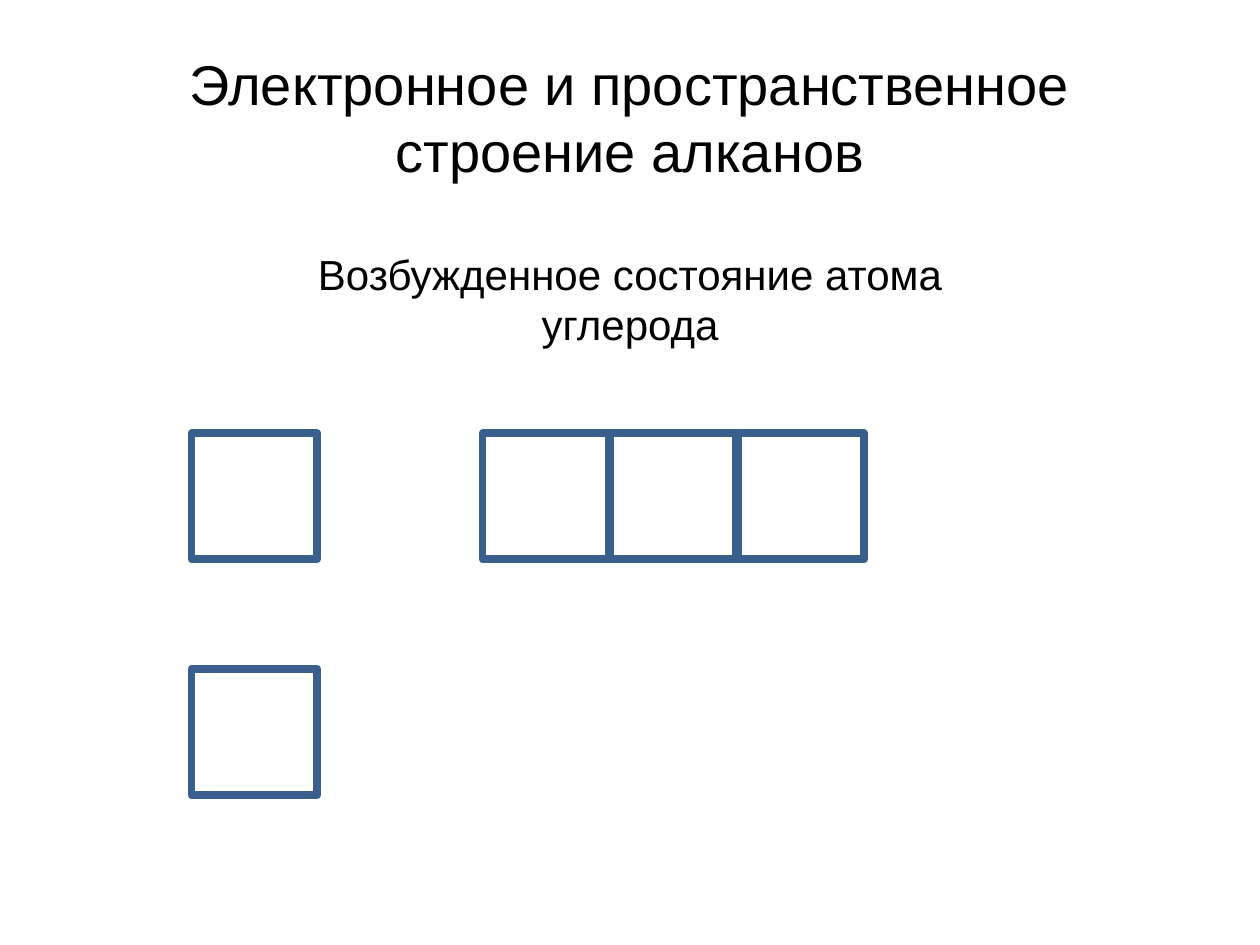
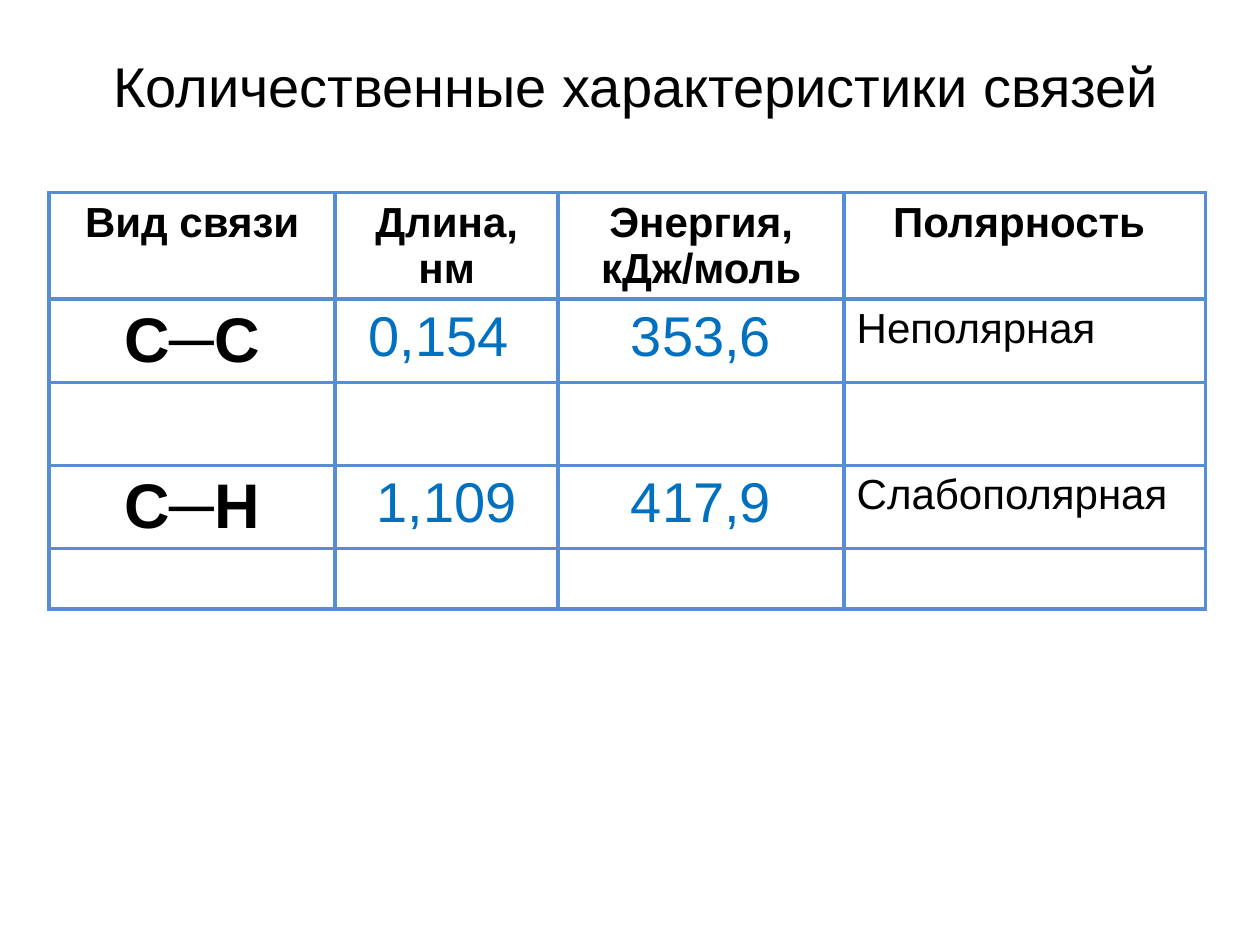
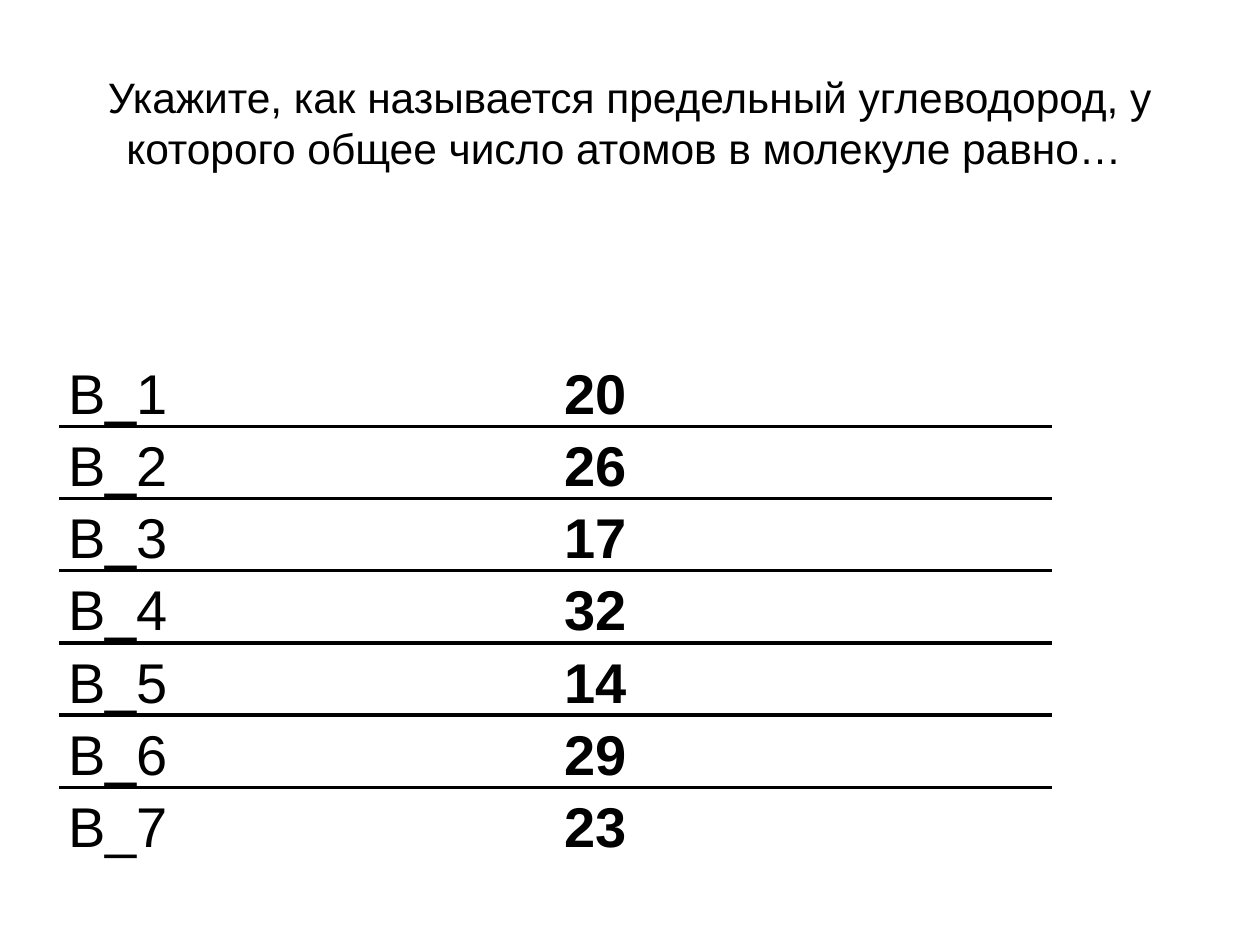
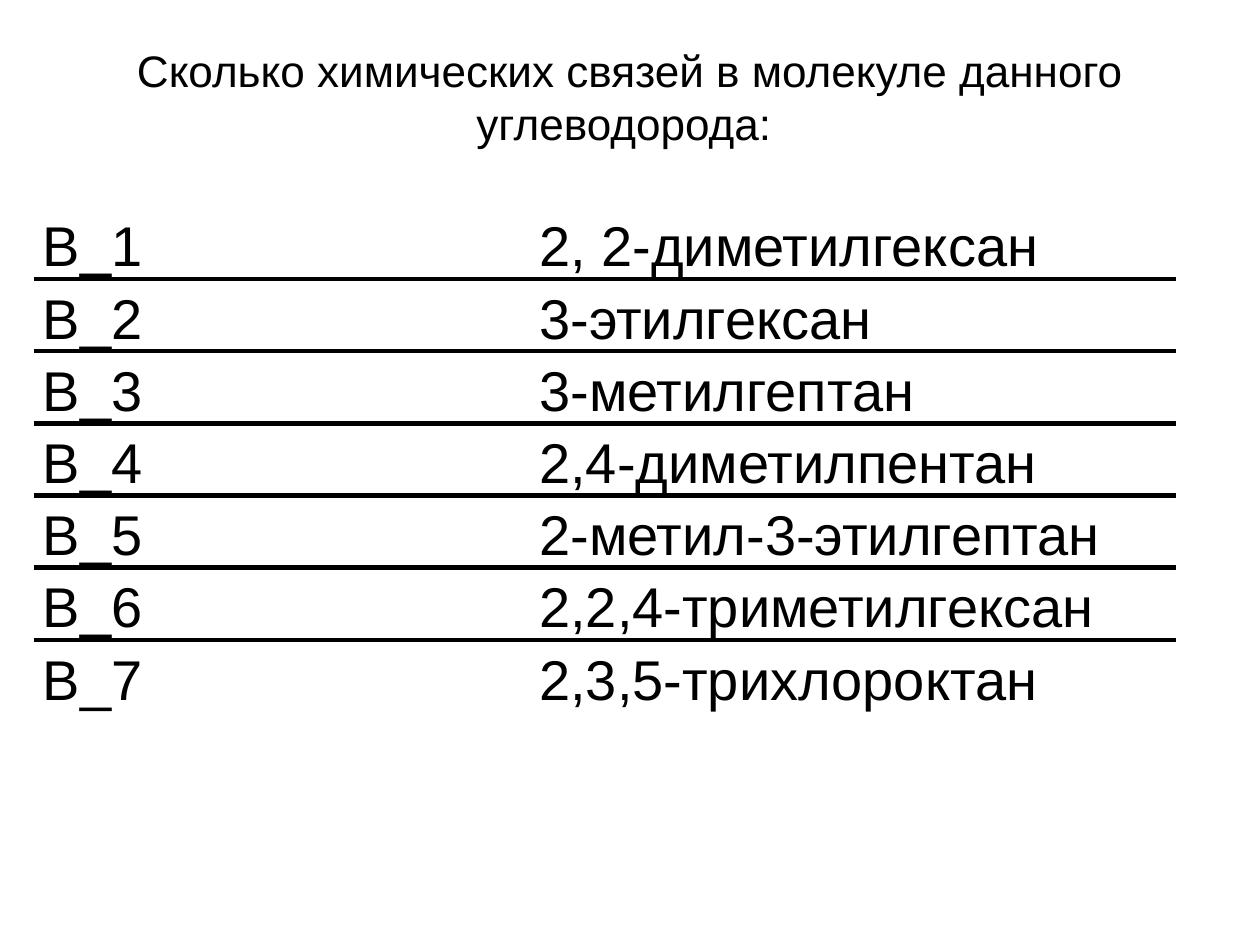
from lxml.etree import SubElement
from pptx import Presentation
from pptx.dml.color import RGBColor
from pptx.enum.shapes import MSO_SHAPE as Shape
from pptx.enum.text import MSO_ANCHOR as Anchor, MSO_AUTO_SIZE as AutoSize, PP_ALIGN as Align
from pptx.oxml.ns import qn
from pptx.util import Inches, Pt

# Grid: 100 columns by 75 rows on a 10 x 7.5 inch page
WIDTH, HEIGHT = Inches(10), Inches(7.5)
COLUMNS, ROWS = 100, 75
TITLE_ONLY = 5

FONT = "Arial"
BLACK, SQUARE_BLUE, GRID_BLUE, VALUE_BLUE = "000000", "3A5F8C", "558ED5", "0070C0"
PLAIN_TABLE = "{2D5ABB26-0587-4C30-8999-92F81FD0307C}"
VARIANTS = [f"В_{number}" for number in range(1, 8)]


def color(code):
    return RGBColor.from_string(code)


class Page:
    """Holds the deck's style and the current slide."""

    def __init__(self, deck):
        self.deck = deck
        self.slide = None

    def across(self, columns):
        return round(WIDTH * columns / COLUMNS)

    def down(self, rows):
        return round(HEIGHT * rows / ROWS)

    def area(self, left, top, width, height):
        return self.across(left), self.down(top), self.across(width), self.down(height)

    def fill_text(self, frame, text, size, code=BLACK, bold=False, align=Align.CENTER,
                  spacing=None):
        frame.text = text
        for para in frame.paragraphs:
            para.alignment, para.line_spacing = align, spacing
            for span in para.runs:
                font = span.font
                font.name, font.size, font.bold = FONT, Pt(size), bold
                font.color.rgb = color(code)

    def settle(self, frame):
        frame.word_wrap = True
        frame.auto_size = AutoSize.NONE
        frame.vertical_anchor = Anchor.MIDDLE

    def start(self, text, place, size=32, lift=0):
        """Adds a slide; lift raises the title within its box."""
        self.slide = self.deck.slides.add_slide(self.deck.slide_layouts[TITLE_ONLY])
        title = self.slide.shapes.title
        title.left, title.top, title.width, title.height = self.area(*place)
        self.settle(title.text_frame)
        title.text_frame.margin_bottom = Inches(0.05) + self.down(2 * lift)
        self.fill_text(title.text_frame, text, size)

    def text(self, text, place, size):
        box = self.slide.shapes.add_textbox(*self.area(*place))
        self.settle(box.text_frame)
        self.fill_text(box.text_frame, text, size)

    def square(self, left, top, side=10):
        box = self.slide.shapes.add_shape(Shape.RECTANGLE, *self.area(left, top, side, side))
        box.shadow.inherit = False
        box.fill.background()
        box.line.color.rgb = color(SQUARE_BLUE)
        box.line.width = Pt(4.5)

    def table(self, left, top, widths, heights):
        place = self.area(left, top, sum(widths), sum(heights))
        frame = self.slide.shapes.add_table(len(heights), len(widths), *place)
        table = frame.table
        table.first_row = table.horz_banding = False
        frame._element.find(".//" + qn("a:tableStyleId")).text = PLAIN_TABLE
        for column, width in zip(table.columns, widths):
            column.width = self.across(width)
        for row, height in zip(table.rows, heights):
            row.height = self.down(height)
        for cell in table.iter_cells():
            cell.fill.background()
        return table

    def border(self, cell, sides, code, width):
        """Draws the given sides, named in L, R, T, B order."""
        properties = cell._tc.get_or_add_tcPr()
        for index, side in enumerate(sides):
            line = SubElement(properties, qn(f"a:ln{side}"), w=str(Pt(width)))
            fill = SubElement(line, qn("a:solidFill"))
            SubElement(fill, qn("a:srgbClr"), val=code)
            properties.insert(index, line)

    def variants(self, left, top, widths, answers, width, bold=False):
        """Lists the variants with their tasks, ruled between rows."""
        table = self.table(left, top, widths, [5.73] * len(answers))
        last = len(answers) - 1
        for index, pair in enumerate(zip(VARIANTS, answers)):
            sides = ("T" if index else "") + ("B" if index < last else "")
            for column, text in enumerate(pair):
                cell = table.cell(index, column)
                cell.margin_left = cell.margin_right = Inches(0.07)
                cell.margin_top = cell.margin_bottom = 0
                self.fill_text(cell.text_frame, text, 32, bold=bold and column == 1,
                               align=Align.LEFT, spacing=1.15)
                self.border(cell, sides, BLACK, width)


def electron_slide(page):
    page.start("Электронное и пространственное строение алканов", (5, 3, 90, 12.5))
    # Orbitals: 1s below, 2s and three 2p above
    page.square(15.2, 53.1)
    page.square(15.2, 34.4)
    for index in range(3):
        page.square(38.3 + 10.15 * index, 34.4)
    page.text("Возбужденное состояние атома углерода", (21.1, 18.7, 57.8, 10), 24)


def bond_slide(page):
    page.start("Количественные характеристики связей", (5.5, 1.6, 90, 10.3))
    header = ["Вид связи", "Длина, нм", "Энергия, кДж/моль", "Полярность "]
    bonds = {1: ["С─С", "0,154 ", "353,6", "Неполярная"],
             3: ["С─Н", "1,109", "417,9", "Слабополярная"]}
    # Size, colour, weight and alignment of each column
    styles = [(36, BLACK, True, Align.CENTER), (32, VALUE_BLUE, False, Align.CENTER),
              (32, VALUE_BLUE, False, Align.CENTER), (24, BLACK, False, Align.LEFT)]
    table = page.table(3.9, 15.3, [22.7, 17.7, 22.7, 28.7], [8.4, 6.6, 6.6, 6.6, 4.8])
    for cell in table.iter_cells():
        page.border(cell, "LRTB", GRID_BLUE, 2.25)
    for column, text in enumerate(header):
        page.fill_text(table.cell(0, column).text_frame, text, 24, bold=True)
    for row, texts in bonds.items():
        for column, (text, style) in enumerate(zip(texts, styles)):
            page.fill_text(table.cell(row, column).text_frame, text, *style)


def atom_slide(page):
    page.start("Укажите, как называется предельный углеводород, у которого "
               "общее число атомов в молекуле равно… ", (5, 3, 90, 19.7), 24.3, lift=3.15)
    page.variants(4.7, 28.1, [39.4, 39.4], ["20", "26", "17", "32", "14", "29", "23"],
                  2.25, bold=True)


def molecule_slide(page):
    page.start("Сколько химических связей в молекуле данного углеводорода: ",
               (5, 3, 90, 11.1), 25.2, lift=0.9)
    page.variants(2.7, 16.4, [39.4, 51.2],
                  ["2, 2-диметилгексан", "3-этилгексан", "3-метилгептан",
                   "2,4-диметилпентан", "2-метил-3-этилгептан",
                   "2,2,4-триметилгексан", "2,3,5-трихлороктан"], 3)


def main():
    deck = Presentation()
    deck.slide_width, deck.slide_height = WIDTH, HEIGHT
    page = Page(deck)
    for build in (electron_slide, bond_slide, atom_slide, molecule_slide):
        build(page)
    deck.save("out.pptx")


if __name__ == "__main__":
    main()
